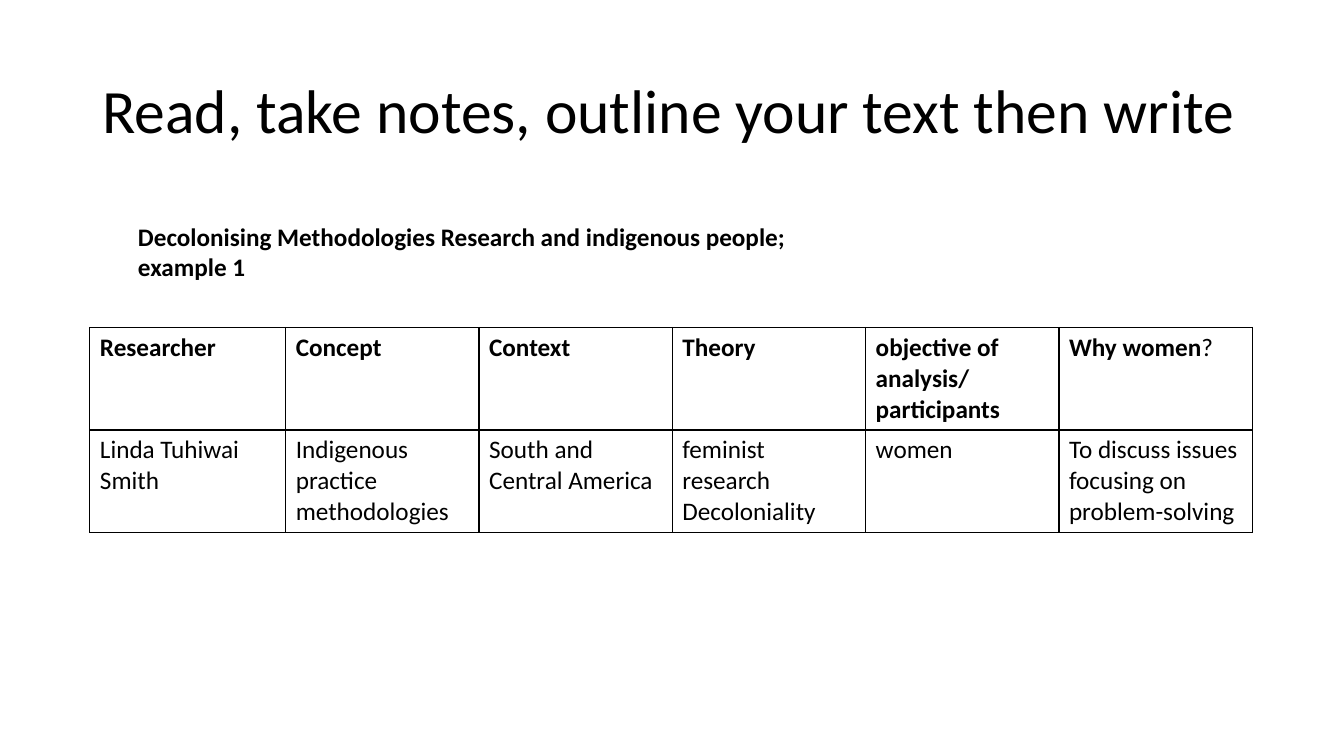
import pptx
import pptx.dml.color
import pptx.enum.text
import pptx.oxml
import pptx.oxml.ns
import pptx.util

Pt = pptx.util.Pt
ANCHOR = pptx.enum.text.MSO_ANCHOR

THEME = {
    "font": "Calibri",
    "ink": "000000",
    "title_size": 44,
    "body_size": 18,
    "border_width": 1,
}


def add_run(paragraph, text, size, bold=False):
    run = paragraph.add_run()
    run.text = text
    font_format = {"name": THEME["font"], "size": Pt(size), "bold": bold}
    for attribute, value in font_format.items():
        setattr(run.font, attribute, value)
    run.font.color.rgb = pptx.dml.color.RGBColor.from_string(THEME["ink"])


def add_border(cell, side):
    cell_properties = cell._tc.get_or_add_tcPr()
    cell_properties.append(pptx.oxml.parse_xml(
        f'<a:{side} {pptx.oxml.ns.nsdecls("a")} w="{Pt(THEME["border_width"])}">'
        f'<a:solidFill><a:srgbClr val="{THEME["ink"]}"/></a:solidFill></a:{side}>'
    ))


presentation = pptx.Presentation()
presentation.slide_width = Pt(960)
presentation.slide_height = Pt(540)
slide = presentation.slides.add_slide(presentation.slide_layouts[6])

# Title and subtitle: text, box, size, bold, anchor, line spacing
text_boxes = [
    ("Read, take notes, outline your text then write",
     (66, 28.75, 828, 104.4), THEME["title_size"], False, ANCHOR.MIDDLE, 0.9),
    ("Decolonising Methodologies Research and indigenous people; example 1",
     (91.5, 154.2, 479.5, 51), THEME["body_size"], True, ANCHOR.TOP, 1.0),
]
for text, box, size, bold, anchor, line_spacing in text_boxes:
    shape = slide.shapes.add_textbox(*map(Pt, box))
    frame_format = {"word_wrap": True, "vertical_anchor": anchor}
    for attribute, value in frame_format.items():
        setattr(shape.text_frame, attribute, value)
    paragraph = shape.text_frame.paragraphs[0]
    paragraph.line_spacing = line_spacing
    add_run(paragraph, text, size, bold)

# Research table: each cell is a list of paragraphs
headings = ["Researcher", "Concept", "Context", "Theory",
            "objective of analysis/ participants", "Why women"]
notes = [
    ["Linda Tuhiwai Smith"],
    ["Indigenous practice methodologies"],
    ["South and Central America"],
    ["feminist research", "Decoloniality"],
    ["women"],
    ["To discuss issues focusing on problem-solving"],
]
rows = [[[heading] for heading in headings], notes]
column_widths = [139.9] + [138.1] * 5
row_height = 73.2

table = slide.shapes.add_table(
    len(rows), len(headings), Pt(64.2), Pt(233.9),
    Pt(sum(column_widths)), Pt(row_height * len(rows)),
).table
table_format = {"first_row": False, "horz_banding": False}
for attribute, value in table_format.items():
    setattr(table, attribute, value)
for column, width in zip(table.columns, column_widths):
    column.width = Pt(width)

for row_index, row in enumerate(rows):
    table.rows[row_index].height = Pt(row_height)
    for column_index, lines in enumerate(row):
        cell = table.cell(row_index, column_index)
        for side in ("lnL", "lnR", "lnT", "lnB"):
            add_border(cell, side)
        cell.fill.background()
        for line_index, line in enumerate(lines):
            frame = cell.text_frame
            paragraph = frame.add_paragraph() if line_index else frame.paragraphs[0]
            add_run(paragraph, line, THEME["body_size"], bold=row_index == 0)

# The question mark of the last heading is not bold
add_run(table.cell(0, 5).text_frame.paragraphs[0], "?", THEME["body_size"])

presentation.save("out.pptx")
